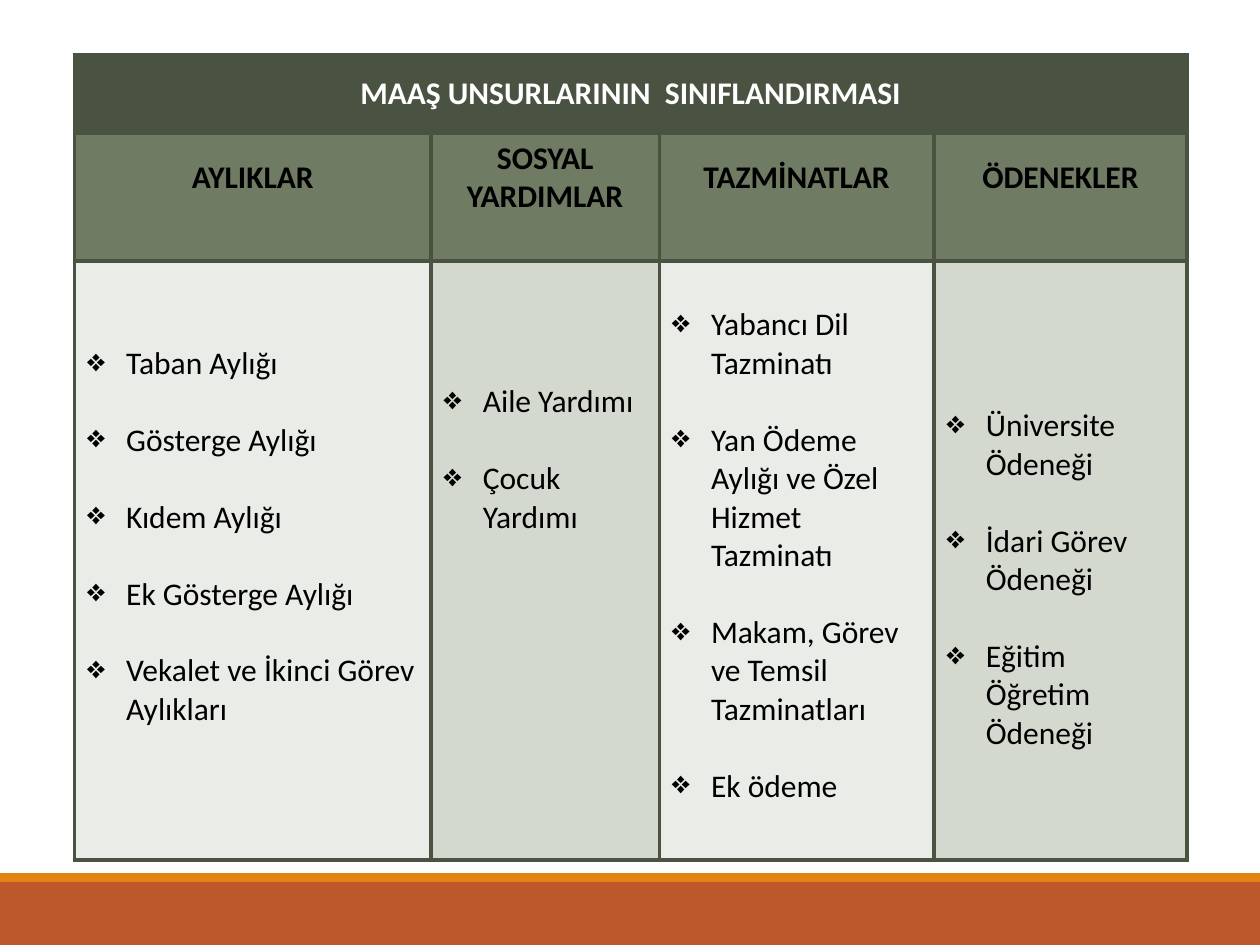
from lxml import etree
from pptx import Presentation
from pptx.dml.color import RGBColor
from pptx.enum.shapes import MSO_SHAPE
from pptx.enum.text import MSO_ANCHOR, PP_ALIGN
from pptx.oxml.ns import qn
from pptx.util import Cm, Pt

RECTANGLE = MSO_SHAPE.RECTANGLE
TOP, MIDDLE = MSO_ANCHOR.TOP, MSO_ANCHOR.MIDDLE
LEFT, CENTER = PP_ALIGN.LEFT, PP_ALIGN.CENTER

WHITE = RGBColor(0xFF, 0xFF, 0xFF)
BLACK = RGBColor(0x00, 0x00, 0x00)
DARK_GREEN = RGBColor(0x4A, 0x52, 0x42)
GREEN = RGBColor(0x6F, 0x7B, 0x63)
PALE_GREENS = [RGBColor(0xEA, 0xEC, 0xE7), RGBColor(0xD4, 0xD9, 0xCF)]
RUST = RGBColor(0xBD, 0x58, 0x2C)
ORANGE = RGBColor(0xE4, 0x83, 0x12)

HEADING = "MAAŞ UNSURLARININ  SINIFLANDIRMASI"
CATEGORIES = [
    {"name": "AYLIKLAR", "width": 7.19, "lines_above": 2, "anchor": TOP,
     "items": ["Taban Aylığı", "Gösterge Aylığı", "Kıdem Aylığı",
               "Ek Gösterge Aylığı", "Vekalet ve İkinci Görev Aylıkları"]},
    {"name": "SOSYAL YARDIMLAR", "width": 4.6, "lines_above": 3, "anchor": TOP,
     "items": ["Aile Yardımı", "Çocuk Yardımı"]},
    {"name": "TAZMİNATLAR", "width": 5.54, "lines_above": 1, "anchor": TOP,
     "items": ["Yabancı Dil Tazminatı", "Yan Ödeme Aylığı ve Özel Hizmet Tazminatı",
               "Makam, Görev ve Temsil Tazminatları", "Ek ödeme"]},
    {"name": "ÖDENEKLER", "width": 5.1, "lines_above": 1, "anchor": MIDDLE,
     "items": ["Üniversite Ödeneği", "İdari Görev Ödeneği", "Eğitim Öğretim Ödeneği"]},
]
ROW_HEIGHTS = [1.57, 2.56, 12.07]
FOOTER_BARS = [(17.78, 1.27, RUST), (17.6, 0.18, ORANGE)]

SLIDE_WIDTH, SLIDE_HEIGHT = 25.4, 19.05
TABLE_LEFT, TABLE_TOP = 1.5, 1.11
LINE_HEIGHT = 0.775
CELL_PADDING = 0.13
INDENT = Cm(0.79)
BORDER_WIDTH = Pt(2.25)

HEADING_FONT = {"name": "Calibri", "size": Pt(18), "bold": True}
ITEM_FONT = {**HEADING_FONT, "bold": False}


def apply_format(target, values):
    for attribute, value in values.items():
        setattr(target, attribute, value)


def add_borders(cell):
    properties = cell._tc.get_or_add_tcPr()
    for position, side in enumerate(("lnL", "lnR", "lnT", "lnB")):
        border = etree.Element(qn(f"a:{side}"), w=str(BORDER_WIDTH))
        fill = etree.SubElement(border, qn("a:solidFill"))
        etree.SubElement(fill, qn("a:srgbClr"), val=str(DARK_GREEN))
        properties.insert(position, border)


def add_bullet(paragraph):
    properties = paragraph._p.get_or_add_pPr()
    properties.set("marL", str(INDENT))
    properties.set("indent", str(-INDENT))
    etree.SubElement(properties, qn("a:buChar"), char="❖")


def fill_cell(cell, texts, fill, color, font, alignment=CENTER, bulleted=False, **cell_format):
    cell.fill.solid()
    cell.fill.fore_color.rgb = fill
    apply_format(cell, {"vertical_anchor": MIDDLE, **cell_format})
    frame = cell.text_frame
    for index, text in enumerate(texts):
        paragraph = frame.add_paragraph() if index else frame.paragraphs[0]
        paragraph.alignment = alignment
        if index:
            paragraph.space_before = Cm(LINE_HEIGHT)
        if bulleted:
            add_bullet(paragraph)
        run = paragraph.add_run()
        run.text = text
        apply_format(run.font, font)
        run.font.color.rgb = color


presentation = Presentation()
apply_format(presentation, {"slide_width": Cm(SLIDE_WIDTH), "slide_height": Cm(SLIDE_HEIGHT)})
slide = presentation.slides.add_slide(presentation.slide_layouts[6])

for top, height, color in FOOTER_BARS:
    bar = slide.shapes.add_shape(RECTANGLE, 0, Cm(top), Cm(SLIDE_WIDTH), Cm(height))
    bar.shadow.inherit = False
    bar.fill.solid()
    bar.fill.fore_color.rgb = color
    bar.line.fill.background()

table_width = sum(category["width"] for category in CATEGORIES)
table = slide.shapes.add_table(
    len(ROW_HEIGHTS), len(CATEGORIES), Cm(TABLE_LEFT), Cm(TABLE_TOP),
    Cm(table_width), Cm(sum(ROW_HEIGHTS))).table
for row, height in zip(table.rows, ROW_HEIGHTS):
    row.height = Cm(height)

table.cell(0, 0).merge(table.cell(0, len(CATEGORIES) - 1))
fill_cell(table.cell(0, 0), [HEADING], DARK_GREEN, WHITE, HEADING_FONT)

for column, category in enumerate(CATEGORIES):
    table.columns[column].width = Cm(category["width"])
    fill_cell(table.cell(1, column), [category["name"]], GREEN, BLACK, HEADING_FONT,
              margin_bottom=Cm(CELL_PADDING + LINE_HEIGHT))
    fill_cell(table.cell(2, column), category["items"], PALE_GREENS[column % 2], BLACK,
              ITEM_FONT, LEFT, bulleted=True, vertical_anchor=category["anchor"],
              margin_top=Cm(CELL_PADDING + category["lines_above"] * LINE_HEIGHT))

for cell in table.iter_cells():
    add_borders(cell)

presentation.save("out.pptx")
